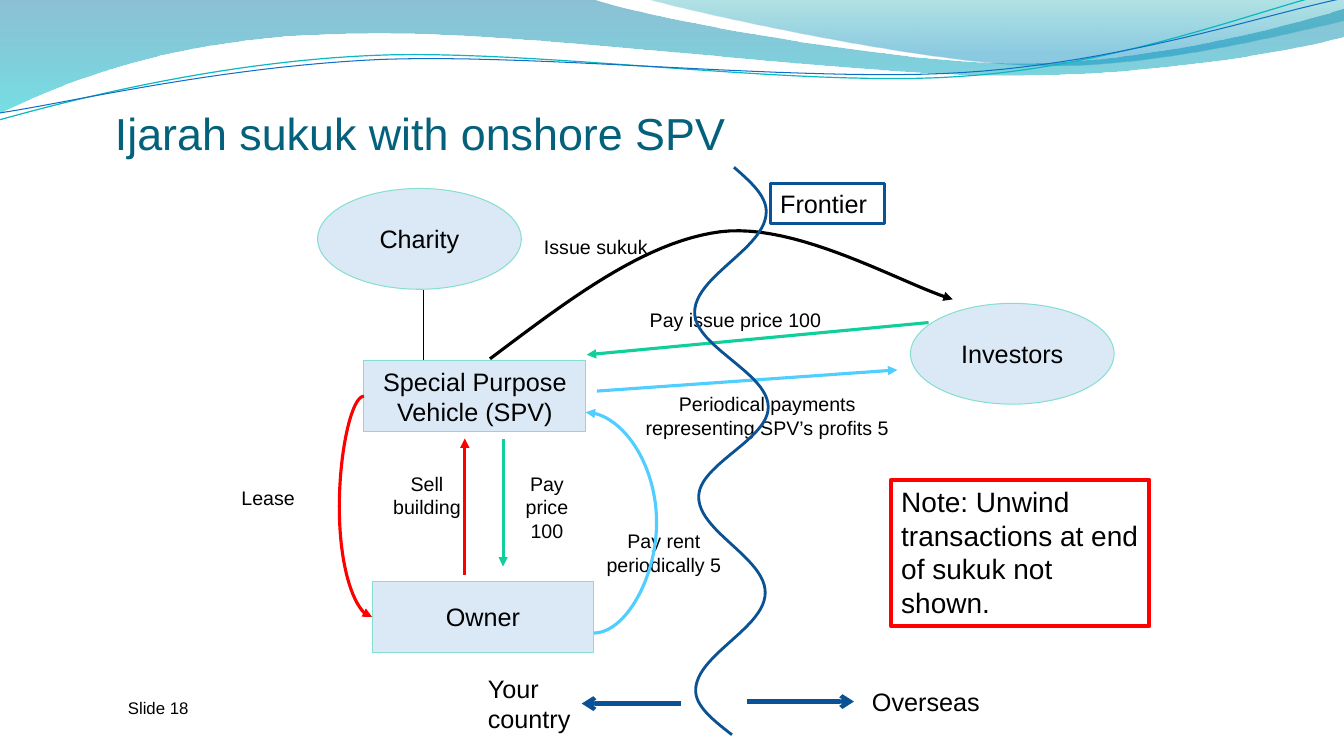
from math import cos, pi, sin

from lxml.etree import SubElement
from pptx import Presentation
from pptx.dml.color import RGBColor
from pptx.enum.shapes import MSO_CONNECTOR, MSO_SHAPE
from pptx.enum.text import MSO_ANCHOR, PP_ALIGN
from pptx.oxml.ns import qn
from pptx.util import Inches, Pt

BLACK, RED, GREEN, SKY, NAVY = "000000", "FF0000", "10CF9B", "4FCEFF", "095295"
STEPS = 24


def fill_shape(shape, stops):
    """Fill with one colour or a downward gradient of (position, colour, opacity)."""
    if len(stops) == 1:
        shape.fill.solid()
        shape.fill.fore_color.rgb = RGBColor.from_string(stops[0][1])
    else:
        shape.fill.gradient()
        shape.fill.gradient_angle = 270
        for stop, (position, color, _) in zip(shape.fill.gradient_stops, stops):
            stop.position = position
            stop.color.rgb = RGBColor.from_string(color)
    tints = list(shape._element.spPr.iter(qn("a:srgbClr")))
    for tint, (_, _, opacity) in zip(tints, stops):
        SubElement(tint, qn("a:alpha"), val=str(opacity * 1000))


def stroke(shape, color, width, head=None):
    shape.line.color.rgb = RGBColor.from_string(color)
    shape.line.width = Pt(width)
    if head:
        SubElement(shape._element.spPr.find(qn("a:ln")), qn("a:tailEnd"), type=head)


deck = Presentation()
deck.slide_width, deck.slide_height = Inches(13.33), Inches(7.5)
page = deck.slides.add_slide(deck.slide_layouts[6])
shapes = page.shapes

# Header waves and the curved sukuk arrow: start, then lines (2 numbers) or Bezier curves (6)
outlines = [
    ((0, 0), [(5.87, -0.01), (6.34, 0.17, 8.85, 0.63, 10.11, 0.63),
              (11.38, 0.63, 12.78, 0.26, 13.33, 0.09), (13.35, 0.36),
              (13.11, 0.44, 11.6, 0.76, 9.94, 0.75), (8.29, 0.75, 5.09, 0.28, 3.43, 0.34),
              (1.72, 0.36, 0.61, 0.83, -0.01, 1.13)],
     [(0, "0074A1", 45), (1, "00C6CF", 55)], None),
    ((6.39, -0.01), [(6.79, 0.11, 9.09, 0.62, 10.25, 0.65),
                     (11.41, 0.69, 12.82, 0.32, 13.33, 0.21), (13.33, 0)],
     [(0, "00A1A9", 30), (0.8, "008BBF", 45)], None),
    ((-0.01, 1.19), [(0.64, 1.01, 2.11, 0.62, 3.69, 0.55), (5.27, 0.48, 7.9, 0.87, 9.5, 0.76),
                     (11.1, 0.66, 12.52, 0.08, 13.31, -0.1)], None, ("0AB8BF", 0.85)),
    ((0, 1.12), [(0.63, 1.03, 2.18, 0.66, 3.78, 0.59), (5.37, 0.53, 7.96, 0.82, 9.55, 0.72),
                 (11.15, 0.62, 12.55, 0.14, 13.34, -0.02)], None, ("0F6FC6", 0.75)),
    ((4.86, 3.56), [(5.62, 2.99, 6.38, 2.4, 7.14, 2.3), (7.91, 2.2, 8.97, 2.83, 9.45, 2.97)],
     None, (BLACK, 2.25, "triangle")),
]
for start, segments, stops, line in outlines:
    points = [start]
    for segment in segments:
        if len(segment) == 2:
            points.append(segment)
            continue
        x0, y0 = points[-1]
        x1, y1, x2, y2, x3, y3 = segment
        for step in range(1, STEPS + 1):
            t = step / STEPS
            a, b, c, d = (1 - t) ** 3, 3 * t * (1 - t) ** 2, 3 * t * t * (1 - t), t ** 3
            points.append((a * x0 + b * x1 + c * x2 + d * x3,
                           a * y0 + b * y1 + c * y2 + d * y3))
    corners = [(Inches(x), Inches(y)) for x, y in points]
    builder = shapes.build_freeform(*corners[0])
    builder.add_line_segments(corners[1:], close=stops is not None)
    outline = builder.convert_to_shape()
    outline.shadow.inherit = False
    if stops:
        fill_shape(outline, stops)
        outline.line.fill.background()
    else:
        outline.fill.background()
        stroke(outline, *line)

# Parties
parties = {}
for kind, x, y, width, height, text in [
    (MSO_SHAPE.RECTANGLE, 3.61, 3.58, 2.2, 0.7, "Special Purpose\nVehicle (SPV)"),
    (MSO_SHAPE.RECTANGLE, 3.69, 5.77, 2.2, 0.7, "Owner"),
    (MSO_SHAPE.OVAL, 9.03, 3.01, 2.02, 1, "Investors"),
    (MSO_SHAPE.OVAL, 3.15, 1.87, 2.02, 1, "Charity"),
]:
    party = shapes.add_shape(kind, Inches(x), Inches(y), Inches(width), Inches(height))
    party.shadow.inherit = False
    fill_shape(party, [(0, "0F6FC6", 15)])
    stroke(party, "85DFD0", 0.75)
    frame = party.text_frame
    frame.text = text
    frame.word_wrap = False
    frame.vertical_anchor = MSO_ANCHOR.MIDDLE
    frame.margin_left = frame.margin_right = Inches(0.07)
    frame.margin_top = frame.margin_bottom = 0
    parties[text] = party

# Title, flow labels and notes
labels = {}
for x, y, width, height, text, size, align in [
    (1.14, 1, 8.9, 0.58, "Ijarah sukuk with onshore SPV", 32, PP_ALIGN.LEFT),
    (3.74, 4.63, 0.99, 0.57, "Sell building", 14, PP_ALIGN.CENTER),
    (4.96, 4.63, 0.93, 0.81, "Pay price 100", 14, PP_ALIGN.CENTER),
    (5.87, 5.2, 1.43, 0.57, "Pay rent periodically 5", 14, PP_ALIGN.CENTER),
    (5.92, 3.01, 2.75, 0.33, "Pay issue price 100", 14, PP_ALIGN.CENTER),
    (5.07, 2.28, 1.68, 0.34, "Issue sukuk", 14, PP_ALIGN.CENTER),
    (6.19, 3.84, 2.84, 0.57, "Periodical payments representing SPV’s profits 5", 14,
     PP_ALIGN.CENTER),
    (1.82, 4.77, 1.68, 0.33, "Lease", 14, PP_ALIGN.CENTER),
    (8.84, 4.76, 2.56, 1.45, "Note: Unwind transactions at end of sukuk not shown.", 20,
     PP_ALIGN.LEFT),
    (4.74, 6.63, 1.31, 0.71, "Your country", 18, PP_ALIGN.LEFT),
    (8.55, 6.76, 1.31, 0.4, "Overseas", 18, PP_ALIGN.LEFT),
    (7.64, 1.82, 1.13, 0.4, "Frontier", 18, PP_ALIGN.LEFT),
    (1.17, 6.87, 2.33, 0.4, "Slide 18", 12, PP_ALIGN.LEFT),
]:
    box = shapes.add_textbox(Inches(x), Inches(y), Inches(width), Inches(height))
    box.text_frame.text = text
    box.text_frame.word_wrap = True
    labels[text] = (box, size, align)

title = labels["Ijarah sukuk with onshore SPV"][0]
title.text_frame.vertical_anchor = MSO_ANCHOR.BOTTOM
title.text_frame.margin_left = title.text_frame.margin_right = 0
title.text_frame.margin_bottom = 0
stroke(labels["Note: Unwind transactions at end of sukuk not shown."][0], RED, 3)
stroke(labels["Frontier"][0], NAVY, 2)

# Text style
centred = [(party, 18, PP_ALIGN.CENTER) for party in parties.values()]
for box, size, align in centred + list(labels.values()):
    for para in box.text_frame.paragraphs:
        para.alignment = align
        for span in para.runs:
            span.font.name = "Arial"
            span.font.size = Pt(size)
            span.font.color.rgb = RGBColor.from_string("04617B" if box is title else BLACK)

# Flows: start, end, colour, width, arrowhead, bend of a curved connector
flows = {}
for name, x1, y1, x2, y2, color, width, head, bend in [
    ("sell", 4.61, 5.7, 4.61, 4.35, RED, 2.25, "triangle", None),
    ("price", 4.99, 4.36, 4.99, 5.62, GREEN, 2.25, "triangle", None),
    ("profits", 5.92, 3.88, 8.9, 3.67, SKY, 2.25, "triangle", None),
    ("issue price", 9.21, 3.2, 5.82, 3.52, GREEN, 2.25, "triangle", None),
    ("rent", 5.89, 6.28, 5.81, 4.09, SKY, 2.25, "triangle", -7.79),
    ("charity", 4.2, 2.88, 4.2, 3.57, BLACK, 0.75, None, None),
    ("lease", 3.61, 3.93, 3.69, 6.12, RED, 2.25, "triangle", -3.06),
    ("home", 6.75, 6.98, 5.77, 6.98, NAVY, 3, "arrow", None),
    ("abroad", 7.41, 6.96, 8.47, 6.96, NAVY, 3, "arrow", None),
]:
    kind = MSO_CONNECTOR.CURVE if bend else MSO_CONNECTOR.STRAIGHT
    flow = shapes.add_connector(kind, Inches(x1), Inches(y1), Inches(x2), Inches(y2))
    stroke(flow, color, width, head)
    SubElement(flow._element.spPr, qn("a:effectLst"))
    if bend:
        guides = flow._element.spPr.find(qn("a:prstGeom")).get_or_add_avLst()
        SubElement(guides, qn("a:gd"), name="adj1", fmla=f"val {round(bend * 100000)}")
    flows[name] = flow
flows["lease"].begin_connect(parties["Special Purpose\nVehicle (SPV)"], 1)
flows["lease"].end_connect(parties["Owner"], 1)

# Frontier: half waves between turning points, a quarter wave at either end
turns = [(7.28, 1.66), (7.6, 2.1), (6.89, 3.1), (7.62, 4.04), (6.93, 4.93), (7.59, 5.88),
         (6.9, 6.85), (7.26, 7.29)]
border = []
for index, ((x1, y1), (x2, y2)) in enumerate(zip(turns, turns[1:])):
    for step in range(STEPS + 1):
        t = step / STEPS
        if index == 0:
            share = sin(t * pi / 2)
        elif index == len(turns) - 2:
            share = 1 - cos(t * pi / 2)
        else:
            share = (1 - cos(t * pi)) / 2
        border.append((Inches(x1 + (x2 - x1) * share), Inches(y1 + (y2 - y1) * t)))
builder = shapes.build_freeform(*border[0])
builder.add_line_segments(border[1:], close=False)
frontier = builder.convert_to_shape()
frontier.shadow.inherit = False
frontier.fill.background()
stroke(frontier, "0B5292", 2)

deck.save("out.pptx")
